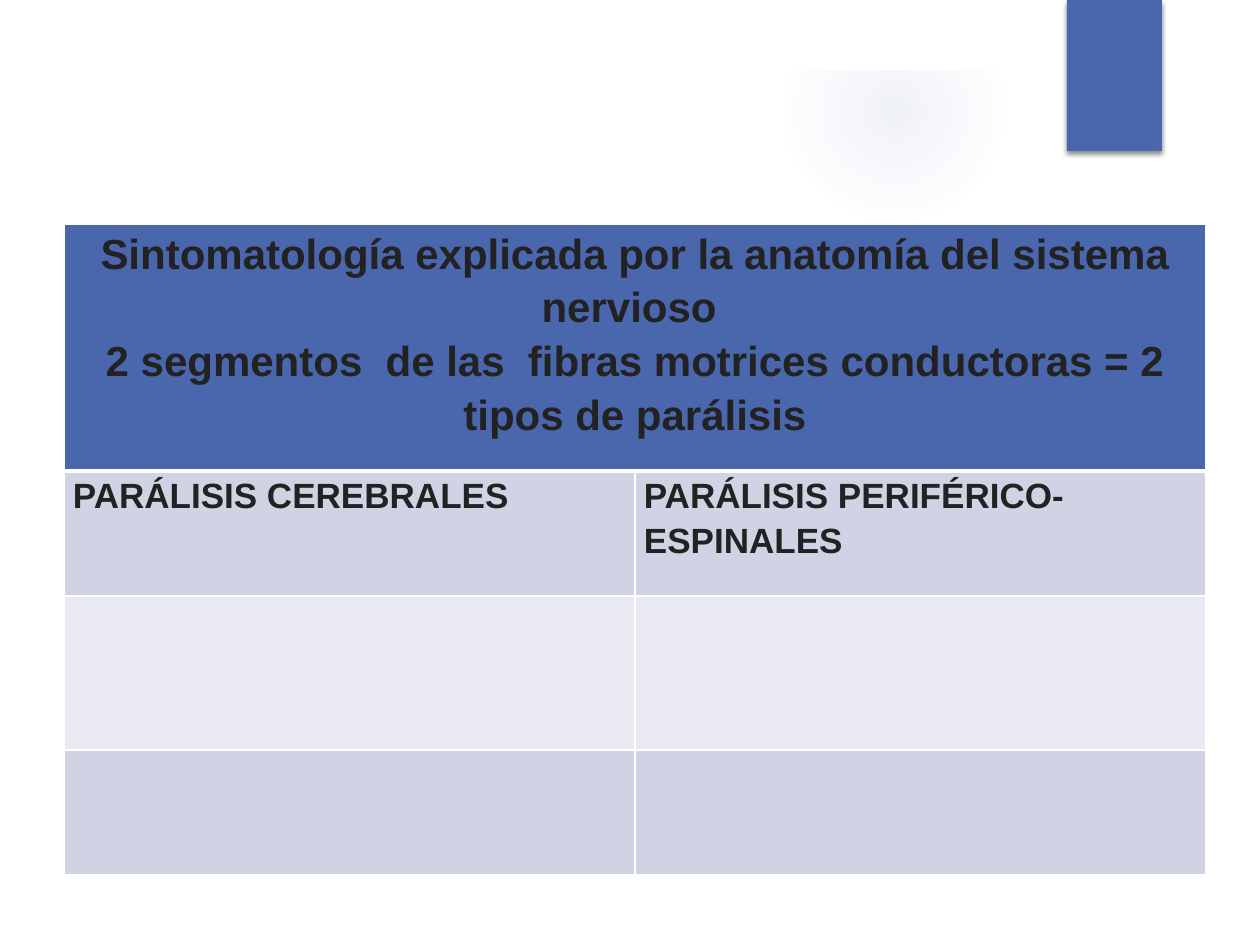
from dataclasses import dataclass
from pptx import Presentation
from pptx.dml.color import RGBColor as Rgb
from pptx.enum.shapes import MSO_SHAPE as Kind
from pptx.enum.text import PP_ALIGN as Align
from pptx.oxml import parse_xml
from pptx.oxml.ns import nsdecls
from pptx.util import Pt

SCALE = 914400 / 126


@dataclass(frozen=True)
class Theme:
    font: str = "Arial"
    blue: str = "4A66AC"
    glow: str = "90A2CF"
    white: str = "FFFFFF"
    ink: str = "222222"
    dark: str = "D0D3E3"
    light: str = "E9EAF1"
    head: int = 24
    body: int = 20


@dataclass(frozen=True)
class Box:
    left: int
    top: int
    wide: int
    high: int

    def emu(self) -> list[int]:
        return [px(n) for n in (self.left, self.top, self.wide, self.high)]


@dataclass(frozen=True)
class Row:
    high: int
    fill: str
    texts: tuple[str, ...] = ()
    size: int = 20
    align: Align = Align.LEFT
    top: int = 1
    base: int = 1


THEME = Theme()
GRID = Box(64, 224, 1142, 651)
ROWS = (
    Row(247, THEME.blue, (
        "Sintomatología explicada por la anatomía del sistema nervioso \n"
        "2 segmentos  de las  fibras motrices conductoras = 2 tipos de parálisis",
    ), THEME.head, Align.CENTER, base=3),
    Row(125, THEME.dark, ("PARÁLISIS CEREBRALES", "PARÁLISIS PERIFÉRICO-ESPINALES"), THEME.body, top=3),
    Row(154, THEME.light),
    Row(125, THEME.dark),
)


def px(num: int) -> int:
    return round(num * SCALE)


def xml(body: str):
    return parse_xml(body.replace(">", f" {nsdecls('a')}>", 1))


def tint(hue: str, alpha: int) -> str:
    return f'<a:srgbClr val="{hue}"><a:alpha val="{alpha * 1000}"/></a:srgbClr>'


def paint(shape, hue: str) -> None:
    shape.shadow.inherit = False
    shape.fill.solid()
    shape.fill.fore_color.rgb = Rgb.from_string(hue)
    shape.line.fill.background()


def write(frame, text: str, *, size: int, hue: str, align: Align, bold: bool = True) -> None:
    for num, line in enumerate(text.split("\n")):
        para = frame.add_paragraph() if num else frame.paragraphs[0]
        para.alignment = align
        para.line_spacing = 1.15
        run = para.add_run()
        run.text = line
        font = run.font
        font.name, font.size, font.bold = THEME.font, Pt(size), bold
        font.color.rgb = Rgb.from_string(hue)


def add_glow(shapes, box: Box, stops: dict[int, int]) -> None:
    glow = shapes.add_shape(Kind.OVAL, *box.emu())
    paint(glow, THEME.glow)
    marks = "".join(f'<a:gs pos="{pos * 1000}">{tint(THEME.glow, alpha)}</a:gs>' for pos, alpha in stops.items())
    grad = xml(f'<a:gradFill><a:gsLst>{marks}</a:gsLst><a:path path="circle">'
               '<a:fillToRect l="50000" t="50000" r="50000" b="50000"/></a:path></a:gradFill>')
    props = glow._element.spPr
    props.replace(props.find(".//{*}solidFill"), grad)


def add_frame(shapes, outer: Box, inner: Box) -> None:
    form = shapes.build_freeform(0, 0, scale=SCALE)
    for box in (outer, inner):
        right, base = box.left + box.wide, box.top + box.high
        form.move_to(box.left, box.top)
        form.add_line_segments([(box.left, base), (right, base), (right, box.top)], close=True)
    paint(form.convert_to_shape(), THEME.white)


def add_bar(shapes, box: Box) -> None:
    bar = shapes.add_shape(Kind.RECTANGLE, *box.emu())
    paint(bar, THEME.blue)
    bar._element.spPr.find("{*}effectLst").append(xml(
        f'<a:outerShdw blurRad="{Pt(3)}" dist="{Pt(2)}" dir="5400000" rotWithShape="0">'
        f'{tint("000000", 45)}</a:outerShdw>'))


def edge(cell, row: Row) -> None:
    sides = {"L": 1, "R": 1, "T": row.top, "B": row.base}
    for num, (side, wide) in enumerate(sides.items()):
        cell._tc.get_or_add_tcPr().insert(num, xml(
            f'<a:ln{side} w="{Pt(wide)}"><a:solidFill><a:srgbClr val="{THEME.white}"/>'
            f'</a:solidFill></a:ln{side}>'))


def add_grid(shapes, box: Box, rows: tuple[Row, ...], cols: int) -> None:
    table = shapes.add_table(len(rows), cols, *box.emu()).table
    for col in table.columns:
        col.width = px(box.wide // cols)
    for y, row in enumerate(rows):
        table.rows[y].height = px(row.high)
        for x in range(cols):
            cell = table.cell(y, x)
            cell.fill.solid()
            cell.fill.fore_color.rgb = Rgb.from_string(row.fill)
            edge(cell, row)
            if x < len(row.texts):
                cell.margin_left = cell.margin_right = px(9)
                cell.margin_top = cell.margin_bottom = 0
                write(cell.text_frame, row.texts[x], size=row.size, hue=THEME.ink, align=row.align)
    table.cell(0, 0).merge(table.cell(0, cols - 1))


def main() -> None:
    """Build the slide on the two kinds of paralysis."""
    deck = Presentation()
    deck.slide_width, deck.slide_height = px(1260), px(945)
    shapes = deck.slides.add_slide(deck.slide_layouts[6]).shapes
    add_glow(shapes, Box(784, 1, 220, 220), {0: 14, 36: 7, 73: 0})
    add_frame(shapes, Box(0, 0, 1260, 945), Box(70, 70, 1121, 806))
    add_bar(shapes, Box(1067, 0, 95, 151))
    add_grid(shapes, GRID, ROWS, 2)
    deck.save("out.pptx")


if __name__ == "__main__":
    main()
